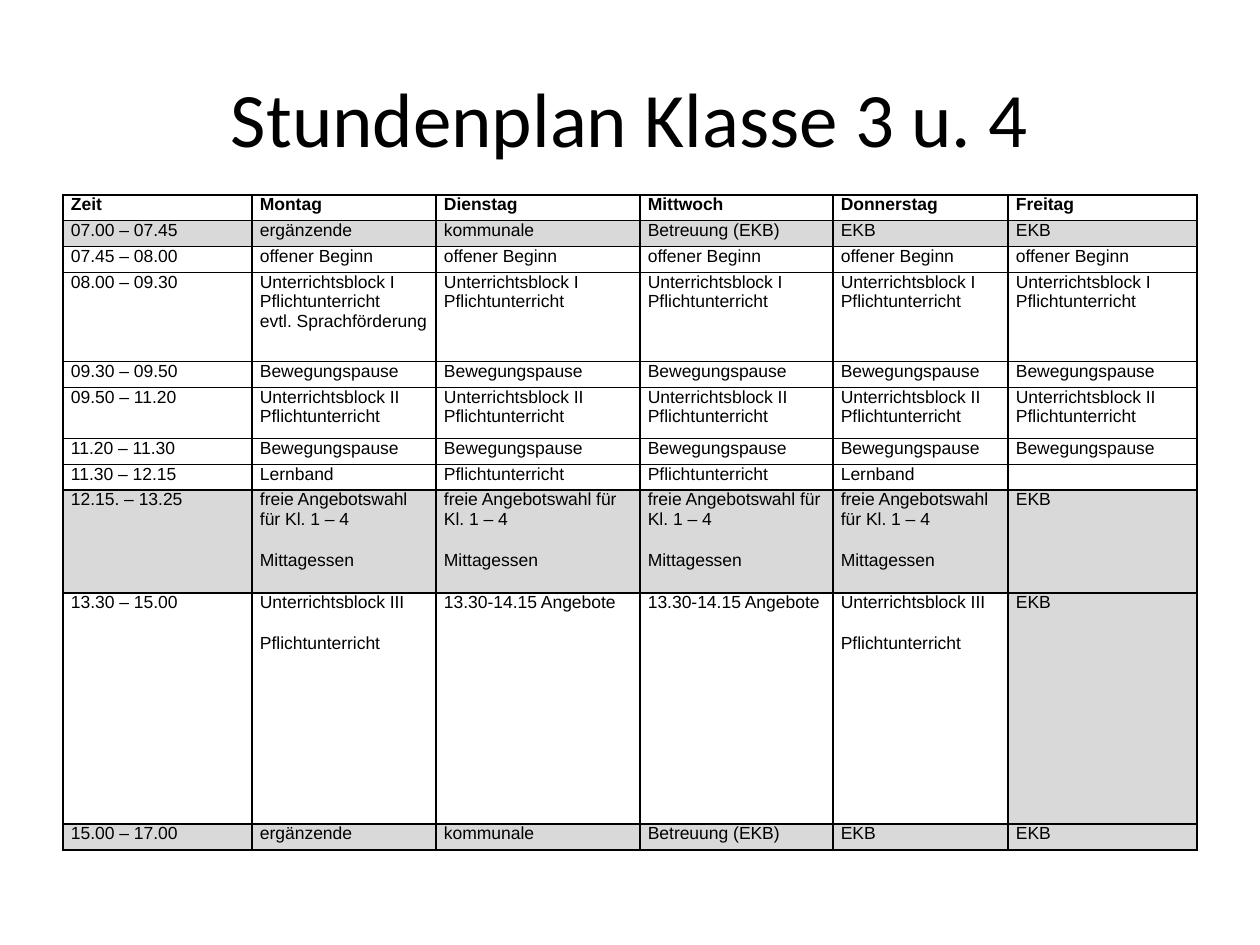
from dataclasses import dataclass

from lxml.etree import SubElement
from pptx import Presentation
from pptx.dml.color import RGBColor
from pptx.enum.text import MSO_ANCHOR as Anchor, PP_ALIGN as Align
from pptx.oxml.ns import qn
from pptx.util import Cm, Pt

BLACK, WHITE, GREY = "000000", "FFFFFF", "D9D9D9"
COLUMN_WIDTHS = (3.81, 3.71, 4.11, 3.89, 3.53, 3.81)
SINGLE_ROW = 0.52


@dataclass(frozen=True)
class Period:
    time: str
    days: tuple[str, ...]
    height: float = SINGLE_ROW
    shaded_days: tuple[int, ...] = ()
    bold: bool = False
    tight: bool = False


ALL_COLUMNS = tuple(range(len(COLUMN_WIDTHS)))
CARE = ("ergänzende", "kommunale", "Betreuung (EKB)", "EKB", "EKB")
BLOCK_ONE = "Unterrichtsblock I\nPflichtunterricht"
BLOCK_TWO = "Unterrichtsblock II Pflichtunterricht"
BLOCK_THREE = "Unterrichtsblock III\nPflichtunterricht"
LUNCH = "freie Angebotswahl für Kl. 1 – 4\nMittagessen"
OFFERS = "13.30-14.15 Angebote"
BREAK = ("Bewegungspause",) * 5

PERIODS = (
    Period("Zeit", ("Montag", "Dienstag", "Mittwoch", "Donnerstag", "Freitag"), bold=True),
    Period("07.00 – 07.45", CARE, shaded_days=ALL_COLUMNS),
    Period("07.45 – 08.00", ("offener Beginn",) * 5),
    Period("08.00 – 09.30", (BLOCK_ONE + "\nevtl. Sprachförderung",) + (BLOCK_ONE,) * 4,
           height=1.8, tight=True),
    Period("09.30 – 09.50", BREAK),
    Period("09.50 – 11.20", (BLOCK_TWO,) * 5, height=1.03),
    Period("11.20 – 11.30", BREAK),
    Period("11.30 – 12.15", ("Lernband", "Pflichtunterricht", "Pflichtunterricht", "Lernband", "")),
    Period("12.15. – 13.25", (LUNCH,) * 4 + ("EKB",), height=2.07, shaded_days=ALL_COLUMNS),
    Period("13.30 – 15.00", (BLOCK_THREE, OFFERS, OFFERS, BLOCK_THREE, "EKB"),
           height=4.66, shaded_days=(5,)),
    Period("15.00 – 17.00", CARE, shaded_days=ALL_COLUMNS),
)


def color(value: str) -> RGBColor:
    return RGBColor.from_string(value)


def write_text(frame, text: str, *, size: float, font: str, bold: bool = False,
               align=Align.LEFT, spacing: float = 0, tight: bool = False) -> None:
    frame.word_wrap = True
    lines = text.split("\n")
    for index, line in enumerate(lines):
        paragraph = frame.paragraphs[0] if index == 0 else frame.add_paragraph()
        paragraph.alignment = align
        paragraph.space_before = Pt(0 if tight and index > 0 else spacing)
        paragraph.space_after = Pt(0 if tight and index < len(lines) - 1 else spacing)
        if not line:
            SubElement(paragraph._p, qn("a:endParaRPr"), sz=str(int(size * 100)))
            continue
        run = paragraph.add_run()
        run.text = line
        run.font.size = Pt(size)
        run.font.name = font
        run.font.bold = bold
        run.font.color.rgb = color(BLACK)


def set_borders(cell, line_color: str, width: float) -> None:
    properties = cell._tc.get_or_add_tcPr()
    for position, side in enumerate(("lnL", "lnR", "lnT", "lnB")):
        line = SubElement(properties, qn(f"a:{side}"), w=str(Pt(width)))
        fill = SubElement(line, qn("a:solidFill"))
        SubElement(fill, qn("a:srgbClr"), val=line_color)
        properties.insert(position, line)


def draw_cell(cell, text: str, period: Period, shaded: bool) -> None:
    cell.margin_left = cell.margin_right = Cm(0.16)
    cell.margin_top = cell.margin_bottom = 0
    cell.vertical_anchor = Anchor.TOP
    cell.fill.solid()
    cell.fill.fore_color.rgb = color(GREY if shaded else WHITE)
    set_borders(cell, BLACK, 1)
    write_text(cell.text_frame, text, size=10, font="Arial", bold=period.bold,
               spacing=6, tight=period.tight)


def draw_timetable(slide, periods: tuple[Period, ...]) -> None:
    table = slide.shapes.add_table(
        len(periods), len(COLUMN_WIDTHS), Cm(1.27), Cm(3.93),
        Cm(sum(COLUMN_WIDTHS)), Cm(sum(period.height for period in periods))).table
    table.first_row = table.horz_banding = False
    for column, width in zip(table.columns, COLUMN_WIDTHS):
        column.width = Cm(width)
    for row, period in zip(table.rows, periods):
        row.height = Cm(period.height)
        for index, text in enumerate((period.time, *period.days)):
            draw_cell(row.cells[index], text, period, index in period.shaded_days)


def draw_title(slide, text: str) -> None:
    title = slide.shapes.title
    title.left, title.top, title.width, title.height = Cm(1.27), Cm(0.76), Cm(22.86), Cm(3.18)
    title.text_frame.vertical_anchor = Anchor.MIDDLE
    write_text(title.text_frame, text, size=44, font="Calibri", align=Align.CENTER)


def main() -> None:
    presentation = Presentation()
    presentation.slide_width, presentation.slide_height = Cm(25.4), Cm(19.05)
    slide = presentation.slides.add_slide(presentation.slide_layouts[5])
    draw_title(slide, "Stundenplan Klasse 3 u. 4")
    draw_timetable(slide, PERIODS)
    presentation.save("out.pptx")


if __name__ == "__main__":
    main()
